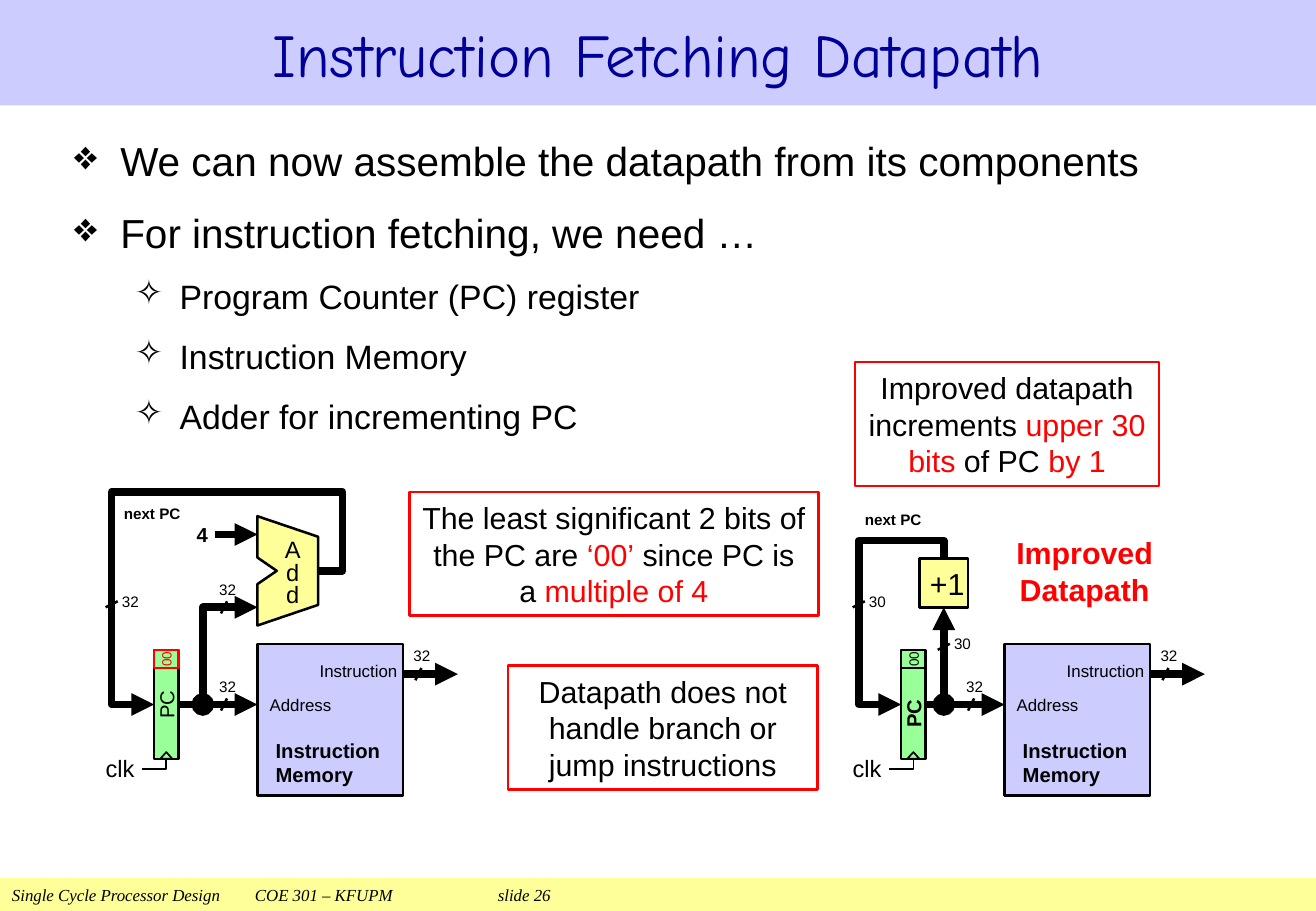
"""Build the slide on the instruction fetching datapath."""
import pptx
import pptx.util
import pptx.dml.color
import pptx.enum.shapes
import pptx.enum.text
import pptx.oxml
import pptx.oxml.ns

THEME = {
    "font": "Arial", "title_font": "Comic Neue", "footer_font": "Times New Roman",
    "black": "000000", "red": "FF0000", "navy": "000099",
    "lilac": "CCCCFF", "yellow": "FFFF99", "green": "99FF99",
    "title": 36, "bullet": 24, "sub": 20, "callout": 18, "clk": 14, "name": 12,
    "small": 10, "width": 9, "tiny": 8, "wire": 4.5, "outline": 1.5, "thin": 1,
}
RED = THEME["red"]
TITLE = "Instruction Fetching Datapath"
FOOTER = "Single Cycle Processor Design\tCOE 301 – KFUPM\tslide 26"
BULLETS = [
    (0, "We can now assemble the datapath from its components"),
    (0, "For instruction fetching, we need …"),
    (1, "Program Counter (PC) register"),
    (1, "Instruction Memory"),
    (1, "Adder for incrementing PC"),
]
BULLET_STYLES = [("❖", "bullet", 27.4, -27.4, 11), ("✧", "sub", 62.6, -26.6, 9.2)]
CALLOUTS = [
    ((242.6, 291.6, 242.6, 73.4), [("The least significant 2 bits of the PC are ",), ("‘00’", RED),
                                   (" since PC is a ",), ("multiple of 4", RED)]),
    ((301, 394.6, 183.6, 73.4), [("Datapath does not handle branch or jump instructions",)]),
    ((506.9, 214.6, 180, 73.4), [("Improved datapath increments ",), ("upper 30 bits", RED),
                                 (" of PC ",), ("by 1", RED)]),
]
ADDER = [(90, 370.8), (126, 358.6), (126, 318.2), (90, 306), (90, 330.5), (101.5, 338.4), (90, 346.3)]
ADDER_LOOP = [(126, 338.4), (140.4, 338.4), (140.4, 291.6), (3.6, 291.6), (3.6, 417.6), (28.8, 417.6)]
PLUS_LOOP = [(54, 331.2), (54, 320.4), (3.6, 320.4), (3.6, 417.6), (28.8, 417.6)]
BRANCH = [(57.6, 417.6), (57.6, 360), (90, 360)]
CLK_WIRE = [(36, 450), (36, 456), (21.6, 456)]
LEFT_X, RIGHT_X = 62.6, 505.4

Pt = pptx.util.Pt
SHAPE = pptx.enum.shapes.MSO_SHAPE
ALIGN = pptx.enum.text.PP_ALIGN
ANCHOR = pptx.enum.text.MSO_ANCHOR
qn = pptx.oxml.ns.qn

prs = pptx.Presentation()
prs.slide_width, prs.slide_height = Pt(780), Pt(540)
s = prs.slides.add_slide(prs.slide_layouts[6])


def rgb(color):
    return pptx.dml.color.RGBColor.from_string(color)


def child(parent, tag, **attrs):
    el = parent.makeelement(qn(tag), attrs)
    parent.append(el)
    return el


def write(sp, paragraphs, size, color=THEME["black"], font=THEME["font"], bold=False,
          italic=False, align=ALIGN.LEFT, anchor=ANCHOR.MIDDLE, ins=(0, 0, 0, 0), wrap=True):
    """Each paragraph is a list of (text, optional colour) runs."""
    tf = sp.text_frame
    tf.word_wrap = wrap
    tf.vertical_anchor = anchor
    tf.margin_left, tf.margin_top, tf.margin_right, tf.margin_bottom = map(Pt, ins)
    for i, runs in enumerate(paragraphs):
        p = tf.add_paragraph() if i else tf.paragraphs[0]
        p.alignment = align
        for text, *own in runs:
            r = p.add_run()
            r.text = text
            r.font.size, r.font.name = Pt(size), font
            r.font.bold, r.font.italic = bold, italic
            r.font.color.rgb = rgb(own[0] if own else color)
    return tf


def label(at, lines, size, **style):
    sp = s.shapes.add_textbox(*map(Pt, at))
    return write(sp, [[(line,)] for line in lines], size, **style)


def paint(sp, fill=None, line=None, width=THEME["outline"]):
    sp.shadow.inherit = False
    if fill:
        sp.fill.solid()
        sp.fill.fore_color.rgb = rgb(fill)
    else:
        sp.fill.background()
    if line:
        sp.line.color.rgb = rgb(line)
        sp.line.width = Pt(width)
    else:
        sp.line.fill.background()
    return sp


def box(at, fill=None, line=THEME["black"], kind=SHAPE.RECTANGLE, width=THEME["outline"]):
    return paint(s.shapes.add_shape(kind, *map(Pt, at)), fill, line, width)


def arrowheads(sp, head, tail):
    ln = sp._element.spPr.find(qn("a:ln"))
    child(ln, "a:round")
    if head:
        child(ln, "a:headEnd", type=head)
    if tail:
        child(ln, "a:tailEnd", type=tail)


def outline(x, points, fill=None, width=THEME["wire"], head=None, tail=None, close=False):
    pts = [(Pt(x + px), Pt(py)) for px, py in points]
    fb = s.shapes.build_freeform(*pts[0], scale=1.0)
    fb.add_line_segments(pts[1:], close=close)
    sp = paint(fb.convert_to_shape(), fill, THEME["black"], width)
    arrowheads(sp, head, tail)


def wire(x, x1, y1, x2, y2, width=THEME["wire"], head=None, tail="triangle"):
    c = s.shapes.add_connector(pptx.enum.shapes.MSO_CONNECTOR.STRAIGHT,
                               Pt(x + x1), Pt(y1), Pt(x + x2), Pt(y2))
    c.line.color.rgb = rgb(THEME["black"])
    c.line.width = Pt(width)
    arrowheads(c, head, tail)
    child(c._element.spPr, "a:effectLst")
    return c


def bus_width(x, bits, at, slash):
    label((x + at[0], at[1], 14.4, 14.4), [bits], THEME["width"], ins=(2.5, 0, 0, 0), wrap=False)
    wire(x, *slash, width=THEME["outline"], tail=None)


def register_part(x, top, height, text, size, color=THEME["black"], line=THEME["black"], bold=False):
    sp = box((x + 28.8, top, 14.4, height), THEME["green"], line)
    tf = write(sp, [[(text, color)]], size, bold=bold, align=ALIGN.CENTER)
    tf._txBody.bodyPr.set("vert", "vert270")
    return sp


def fetch_unit(x, loop, loop_bits, next_pc, pc_top, pc_bold, zero_color):
    """Draw the parts that both datapaths share."""
    pc = register_part(x, pc_top, 450 - pc_top, "PC", THEME["name"], bold=pc_bold)
    register_part(x, 385.2, 10.8, "00", THEME["tiny"], zero_color, zero_color)
    outline(x, loop, tail="triangle")
    box((x + 90, 381.6, 86.4, 90), THEME["lilac"])
    label((x + 97.2, 406.8, 54, 21.6), ["Address"], THEME["small"])
    label((x + 104.4, 388.8, 68.4, 18), ["Instruction"], THEME["small"], align=ALIGN.RIGHT)
    label((x + 100.8, 432, 68.4, 39.6), ["Instruction", "Memory"], THEME["name"], bold=True)
    address = wire(x, 43.2, 417.6, 90, 417.6)
    wire(x, 176.4, 399.6, 208.8, 399.6)
    bus_width(x, "32", (180, 381.6), (187.2, 396, 183.6, 403.2))
    bus_width(x, "32", (64.8, 399.6), (72, 414, 68.4, 421.2))
    bus_width(x, loop_bits, (7.2, 349.2), (7.2, 356.4, 0, 360))
    label((x + next_pc[0], next_pc[1], 39.6, 10.8), ["next PC"], THEME["width"], bold=True)
    box((x + 32.4, 445.8, 7.2, 4), kind=SHAPE.ISOSCELES_TRIANGLE, width=THEME["thin"])
    outline(x, CLK_WIRE, width=THEME["thin"])
    label((x, 447.8, 21.6, 14.4), ["clk"], THEME["clk"], wrap=False)
    return pc, address


write(box((0, 520.6, 780, 19.4), THEME["yellow"], None), [[(FOOTER,)]], THEME["small"],
      font=THEME["footer_font"], italic=True, ins=(7.2, 3.6, 7.2, 3.6))
footer_p = s.shapes[0].text_frame.paragraphs[0]
tabs = child(footer_p._p.get_or_add_pPr(), "a:tabLst")
for stop in (144, 288):
    child(tabs, "a:tab", pos=str(Pt(stop)), algn="l")
write(box((0, 0, 780, 62.6), THEME["lilac"], None), [[(TITLE,)]], THEME["title"],
      THEME["navy"], THEME["title_font"], align=ALIGN.CENTER)

body = label((38.9, 75.6, 702, 232.6), [text for _, text in BULLETS], THEME["bullet"],
             anchor=ANCHOR.TOP, ins=(5, 2.2, 5, 2.2))
for p, (level, _) in zip(body.paragraphs, BULLETS):
    mark, size, left, indent, gap = BULLET_STYLES[level]
    p.line_spacing, p.space_before = 1.1, Pt(gap)
    p.runs[0].font.size = Pt(THEME[size])
    pPr = p._p.get_or_add_pPr()
    pPr.set("marL", str(Pt(left)))
    pPr.set("indent", str(Pt(indent)))
    child(pPr, "a:buChar", char=mark)

for at, runs in CALLOUTS:
    write(box(at, line=RED), [runs], THEME["callout"], align=ALIGN.CENTER, ins=(7.2, 3.6, 7.2, 3.6))

pc, address = fetch_unit(LEFT_X, ADDER_LOOP, "32", (10.8, 298.8), 385.2, False, RED)
address.begin_connect(pc, 3)
outline(LEFT_X, BRANCH, head="oval", tail="triangle")
wire(LEFT_X, 64.8, 316.8, 90, 316.8)
bus_width(LEFT_X, "32", (64.8, 342), (72, 356.4, 68.4, 363.6))
label((LEFT_X + 54, 306, 10.8, 21.6), ["4"], THEME["name"], bold=True)
outline(LEFT_X, ADDER, THEME["yellow"], THEME["outline"], close=True)
add = label((LEFT_X + 95.8, 316.8, 30.2, 47.5), "Add", THEME["clk"], align=ALIGN.CENTER, wrap=False)
for p in add.paragraphs:
    p.line_spacing = 0.8

fetch_unit(RIGHT_X, PLUS_LOOP, "30", (7.2, 302.4), 396, True, THEME["black"])
plus_one = box((RIGHT_X + 39.6, 331.2, 28.8, 28.8), THEME["yellow"])
write(plus_one, [[("+1",)]], THEME["callout"], align=ALIGN.CENTER, ins=(4, 0, 0, 0))
wire(RIGHT_X, 54, 417.6, 54, 360, head="oval").end_connect(plus_one, 2)
bus_width(RIGHT_X, "30", (57.6, 374.4), (57.6, 381.6, 50.4, 385.2))
label((588.2, 313.2, 109.4, 50.4), ["Improved", "Datapath"], THEME["callout"], color=RED,
      bold=True, align=ALIGN.CENTER)

prs.save("out.pptx")
